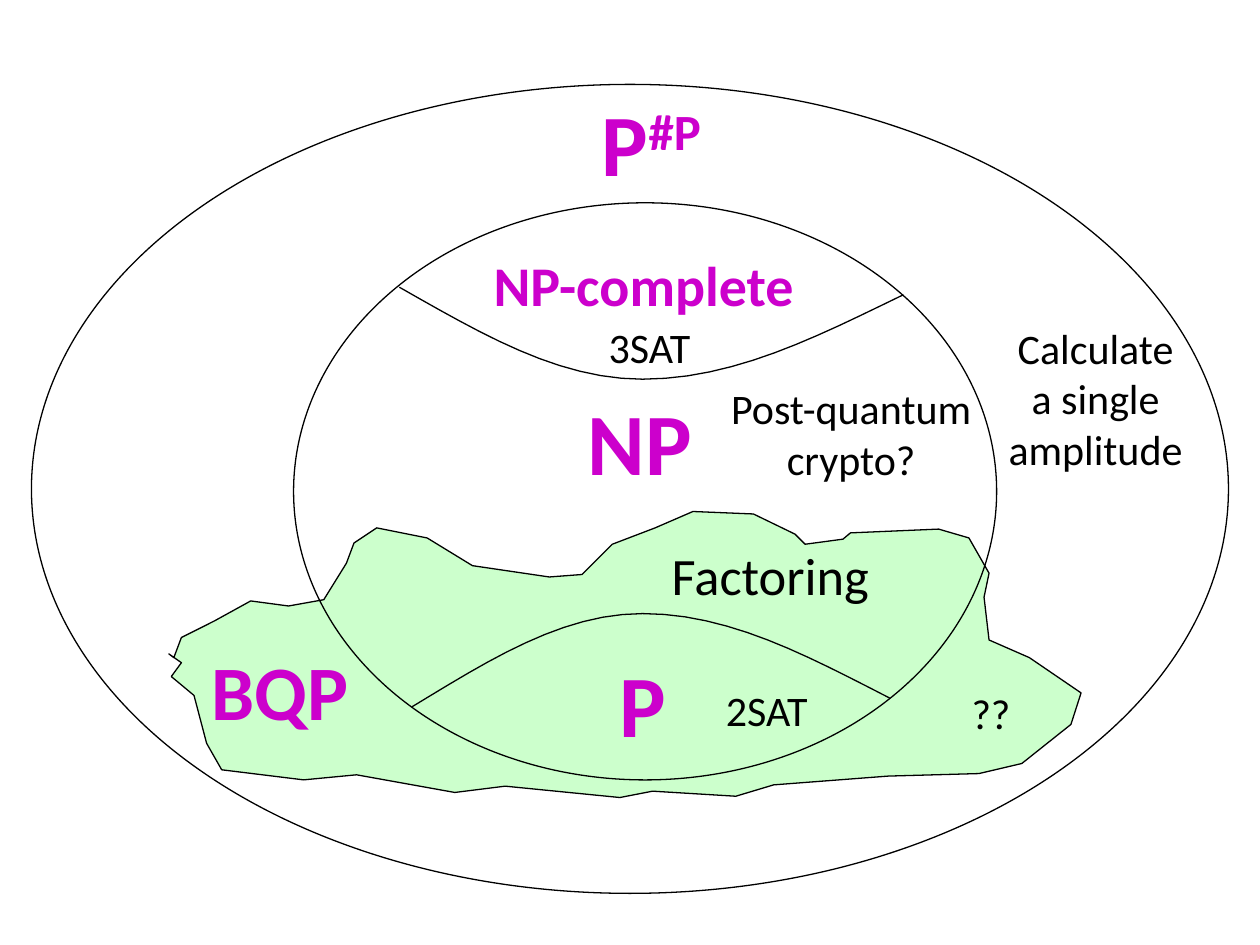
import pptx
import pptx.util
import pptx.dml.color
import pptx.enum.shapes
import pptx.enum.text
from pptx.util import Inches

PURPLE = pptx.dml.color.RGBColor(0xCC, 0x00, 0xCC)
GREEN = pptx.dml.color.RGBColor(0xCC, 0xFF, 0xCC)
BLACK = pptx.dml.color.RGBColor(0x00, 0x00, 0x00)
WHITE = pptx.dml.color.RGBColor(0xFF, 0xFF, 0xFF)
SHAPES = pptx.enum.shapes.MSO_SHAPE

BQP_OUTLINE = [
    (1.38, 5.22), (1.44, 5.06), (1.7, 4.93), (1.99, 4.77), (2.29, 4.81),
    (2.57, 4.76), (2.75, 4.47), (2.81, 4.31), (2.99, 4.19), (3.39, 4.27),
    (3.75, 4.49), (4.36, 4.58), (4.62, 4.56), (4.86, 4.32), (5.2, 4.19),
    (5.5, 4.06), (5.98, 4.08), (6.31, 4.24), (6.39, 4.32), (6.69, 4.28),
    (6.75, 4.23), (7.45, 4.2), (7.69, 4.27), (7.85, 4.55), (7.81, 4.74),
    (7.85, 5.08), (8.17, 5.22), (8.58, 5.5), (8.5, 5.75), (8.11, 6.06),
    (7.77, 6.14), (7.05, 6.16), (6.14, 6.23), (5.84, 6.32), (5.18, 6.28),
    (4.92, 6.33), (4.01, 6.24), (3.61, 6.29), (2.83, 6.15), (2.41, 6.19),
    (1.76, 6.11), (1.64, 5.9), (1.54, 5.52), (1.36, 5.37), (1.44, 5.26),
    (1.34, 5.19),
]


def half_arc(end, apex, steps=12):
    """Sample a curve that leaves end on a slope and is level at apex."""
    (x, y), (apex_x, apex_y) = end, apex
    points = []
    for step in range(steps + 1):
        t = step / steps
        across = t * (1 - t) ** 2 + 1.95 * t ** 2 * (1 - t) + t ** 3
        down = 1.5 * t * (1 - t) ** 2 + 3 * t ** 2 * (1 - t) + t ** 3
        points.append((x + (apex_x - x) * across, y + (apex_y - y) * down))
    return points


def style_outline(shape, fill=None):
    shape.shadow.inherit = False
    if fill is None:
        shape.fill.background()
    else:
        shape.fill.solid()
        shape.fill.fore_color.rgb = fill
    shape.line.color.rgb = BLACK
    shape.line.width = pptx.util.Pt(0.75)


def add_outline(page, points, fill=None):
    start, *rest = [(Inches(x), Inches(y)) for x, y in points]
    builder = page.shapes.build_freeform(*start)
    builder.add_line_segments(rest, close=fill is not None)
    style_outline(builder.convert_to_shape(), fill)


def add_arc(page, left, apex, right):
    add_outline(page, half_arc(left, apex) + half_arc(right, apex)[-2::-1])


def add_ellipse(page, *place):
    style_outline(page.shapes.add_shape(SHAPES.OVAL, *map(Inches, place)))


def write_text(box, text, size, color, bold, superscript=""):
    frame = box.text_frame
    frame.word_wrap = True
    frame.vertical_anchor = pptx.enum.text.MSO_ANCHOR.TOP
    frame.text = text
    para = frame.paragraphs[0]
    para.alignment = pptx.enum.text.PP_ALIGN.CENTER
    if superscript:
        span = para.add_run()
        span.text = superscript
        span.font._element.set("baseline", "30000")
    for span in para.runs:
        span.font.name = "Calibri"
        span.font.size = pptx.util.Pt(size)
        span.font.bold = bold
        span.font.color.rgb = color


def add_class_name(page, text, size, place, superscript=""):
    box = page.shapes.add_textbox(*map(Inches, place))
    write_text(box, text, size, PURPLE, True, superscript)


def add_problem(page, text, place, size=24):
    box = page.shapes.add_textbox(*map(Inches, place))
    write_text(box, text, size, BLACK, False)


def add_filled_class_name(page, text, size, place):
    box = page.shapes.add_shape(SHAPES.RECTANGLE, *map(Inches, place))
    box.shadow.inherit = False
    box.fill.solid()
    box.fill.fore_color.rgb = WHITE
    box.line.fill.background()
    write_text(box, text, size, PURPLE, True)


def main():
    deck = pptx.Presentation()
    deck.slide_width, deck.slide_height = Inches(10), Inches(7.5)
    page = deck.slides.add_slide(deck.slide_layouts[6])

    add_class_name(page, "NP", 50, (4.33, 3.03, 1.5, 0.94))
    add_filled_class_name(page, "NP-complete", 32, (3.58, 1.94, 3.06, 0.64))
    add_outline(page, BQP_OUTLINE, GREEN)
    add_class_name(page, "P", 50, (4.64, 5.11, 0.92, 0.94))
    add_problem(page, "Factoring", (4.81, 4.26, 2.61, 0.61), size=30)
    add_arc(page, (3.17, 2.28), (5.1, 3.01), (7.17, 2.34))
    add_arc(page, (3.27, 5.61), (5.1, 4.87), (7.06, 5.54))
    add_ellipse(page, 2.33, 1.61, 5.58, 4.58)
    add_class_name(page, "BQP", 44, (1.35, 5.06, 1.75, 0.84))
    add_problem(page, "Post-quantum crypto?", (5.56, 2.99, 2.39, 0.91))
    add_ellipse(page, 0.25, 0.67, 9.5, 6.42)
    add_class_name(page, "P", 50, (4.42, 0.66, 1.5, 0.94), superscript="#P")
    add_problem(page, "??", (6.67, 5.41, 2.39, 0.5))
    add_problem(page, "Calculate a single amplitude", (7.89, 2.51, 1.61, 1.31))
    add_problem(page, "2SAT", (4.89, 5.38, 2.39, 0.5))
    add_problem(page, "3SAT", (3.96, 2.5, 2.39, 0.5))

    deck.save("out.pptx")


if __name__ == "__main__":
    main()
